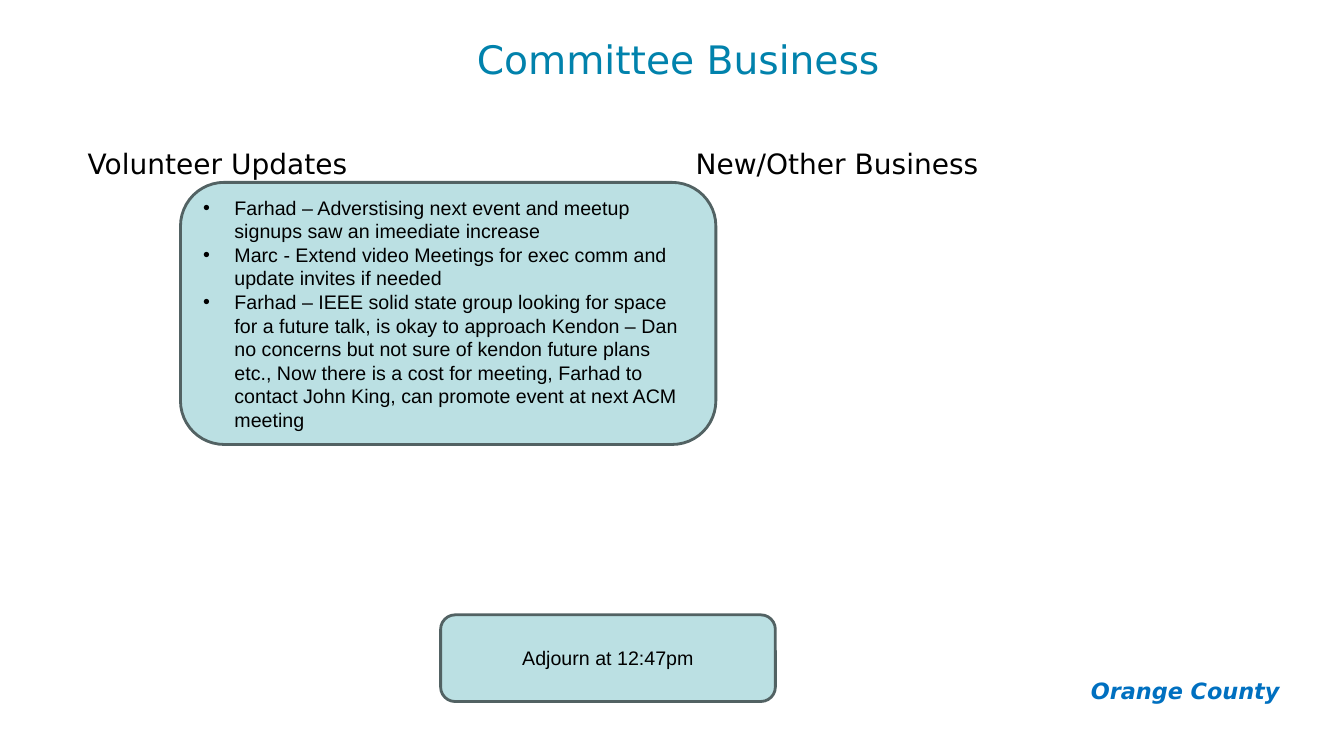
from dataclasses import dataclass

from lxml.etree import SubElement
from pptx import Presentation
from pptx.dml.color import RGBColor
from pptx.enum.shapes import MSO_SHAPE
from pptx.enum.text import MSO_ANCHOR, PP_ALIGN
from pptx.oxml.ns import qn
from pptx.util import Inches, Pt

# Content: text, then left, top, width, height in inches
TITLE = ("Committee Business", (0.78, 0.3, 11.89, 1.25))
HEADINGS = ["Volunteer Updates", "New/Other Business"]
UPDATES = [
    "Farhad – Adverstising next event and meetup signups saw an imeediate increase",
    "Marc - Extend video Meetings for exec comm and update invites if needed",
    "Farhad – IEEE solid state group looking for space for a future talk, is okay "
    "to approach Kendon – Dan no concerns but not sure of kendon future plans etc., "
    "Now there is a cost for meeting, Farhad to contact John King, can promote event "
    "at next ACM meeting",
]
UPDATES_BOX = (1.79, 1.81, 5.31, 2.6)
ADJOURN = ("Adjourn at 12:47pm", (4.37, 6.1, 3.32, 0.86))
CHAPTER = ("Orange County", (10.51, 6.62, 2.28, 0.47))
HEADING_LEFT, HEADING_TOP, HEADING_STEP = 0.77, 1.4, 6.03
HEADING_WIDTH, HEADING_HEIGHT = 5.31, 0.82


@dataclass(frozen=True)
class Theme:
    heading_font: str = "DejaVu Sans"
    body_font: str = "Arial"
    title: str = "0182AC"
    text: str = "000000"
    chapter: str = "0070C0"
    box_fill: str = "BBE0E3"
    box_line: str = "526263"
    title_size: int = 28
    heading_size: int = 20
    chapter_size: int = 16
    body_size: int = 14


THEME = Theme()


def style(p, font, size, color, align=PP_ALIGN.LEFT, bold=False, italic=False):
    p.alignment = align
    for r in p.runs:
        r.font.name, r.font.size = font, Pt(size)
        r.font.bold, r.font.italic = bold, italic
        r.font.color.rgb = RGBColor.from_string(color)


def set_frame(tf, anchor=MSO_ANCHOR.TOP, inset=0.05):
    tf.word_wrap = True
    tf.vertical_anchor = anchor
    tf.margin_left = tf.margin_right = Inches(0.1)
    tf.margin_top = tf.margin_bottom = Inches(inset)


def add_label(slide, text, box, inset=0.05):
    tf = slide.shapes.add_textbox(*map(Inches, box)).text_frame
    set_frame(tf, inset=inset)
    tf.text = text
    return tf.paragraphs[0]


def add_box(slide, lines, box, align):
    sp = slide.shapes.add_shape(MSO_SHAPE.ROUNDED_RECTANGLE, *map(Inches, box))
    sp.shadow.inherit = False
    sp.fill.solid()
    sp.fill.fore_color.rgb = RGBColor.from_string(THEME.box_fill)
    sp.line.color.rgb = RGBColor.from_string(THEME.box_line)
    sp.line.width = Pt(2)
    tf = sp.text_frame
    set_frame(tf, MSO_ANCHOR.MIDDLE)
    tf.text = "\n".join(lines)
    for p in tf.paragraphs:
        style(p, THEME.body_font, THEME.body_size, THEME.text, align)
    return tf


def add_bullet(p):
    pPr = p._p.get_or_add_pPr()
    pPr.set("marL", str(Inches(0.31)))
    pPr.set("indent", str(-Inches(0.31)))
    color = SubElement(pPr, qn("a:buClr"))
    SubElement(color, qn("a:srgbClr"), val=THEME.text)
    SubElement(pPr, qn("a:buFont"), typeface=THEME.body_font)
    SubElement(pPr, qn("a:buChar"), char="•")


def main():
    prs = Presentation()
    prs.slide_width, prs.slide_height = Inches(13.33), Inches(7.5)
    slide = prs.slides.add_slide(prs.slide_layouts[5])

    # Chapter name
    p = add_label(slide, *CHAPTER, inset=0.1)
    style(p, THEME.heading_font, THEME.chapter_size, THEME.chapter,
          PP_ALIGN.RIGHT, bold=True, italic=True)

    # Title
    title, (left, top, width, height) = TITLE
    sp = slide.shapes.title
    sp.left, sp.top = Inches(left), Inches(top)
    sp.width, sp.height = Inches(width), Inches(height)
    set_frame(sp.text_frame)
    sp.text_frame.text = title
    style(sp.text_frame.paragraphs[0], THEME.heading_font, THEME.title_size,
          THEME.title, PP_ALIGN.CENTER)

    # Column headings
    for i, heading in enumerate(HEADINGS):
        box = (HEADING_LEFT + i * HEADING_STEP, HEADING_TOP,
               HEADING_WIDTH, HEADING_HEIGHT)
        p = add_label(slide, heading, box)
        style(p, THEME.heading_font, THEME.heading_size, THEME.text)

    # Updates and closing note
    for p in add_box(slide, UPDATES, UPDATES_BOX, PP_ALIGN.LEFT).paragraphs:
        add_bullet(p)
    note, box = ADJOURN
    add_box(slide, [note], box, PP_ALIGN.CENTER)

    prs.save("out.pptx")


if __name__ == "__main__":
    main()
